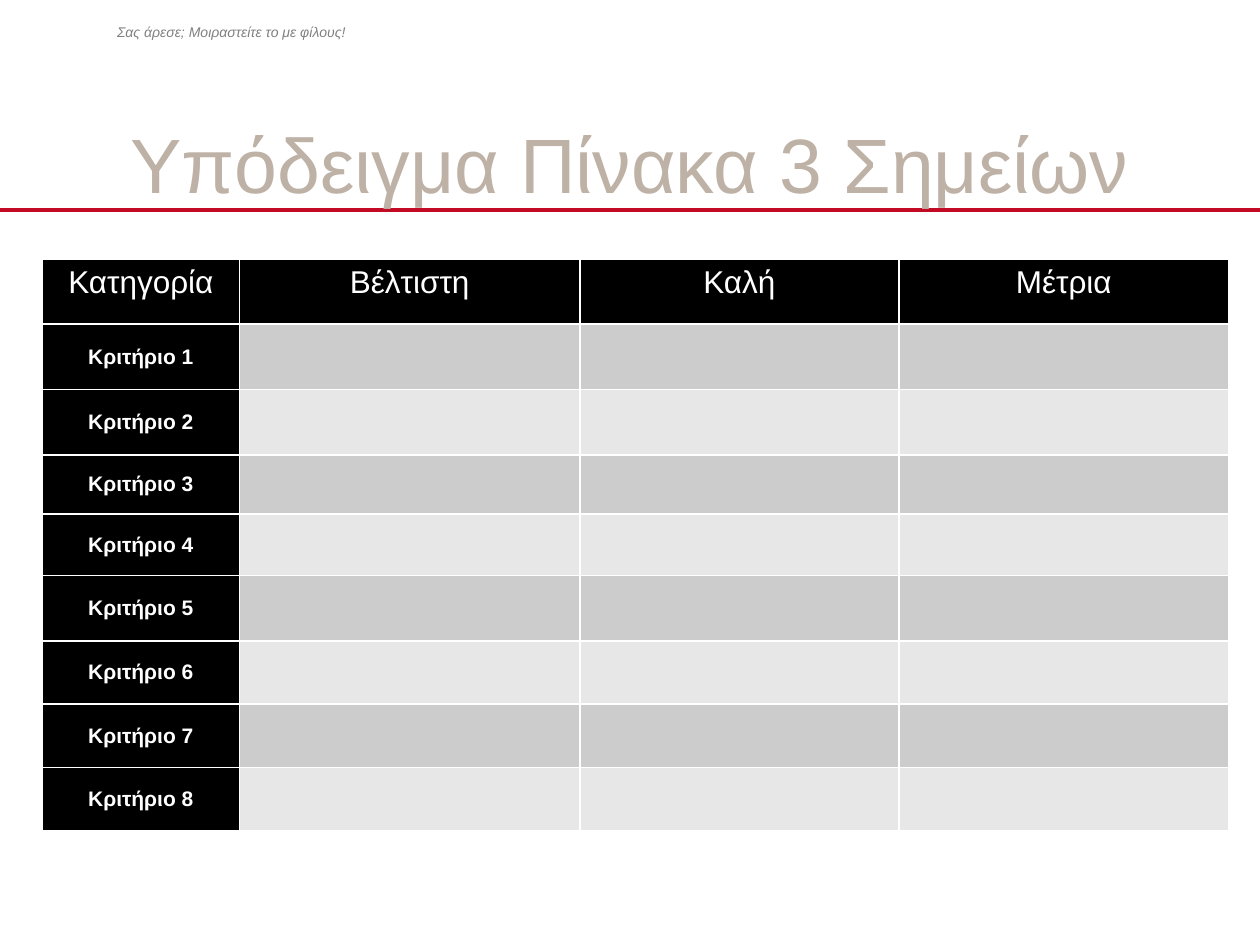
from lxml import etree
from pptx import Presentation
from pptx.dml.color import RGBColor
from pptx.enum.shapes import MSO_CONNECTOR
from pptx.enum.text import MSO_ANCHOR, PP_ALIGN
from pptx.oxml.ns import qn
from pptx.util import Cm, Pt

LEFT, CENTER = PP_ALIGN.LEFT, PP_ALIGN.CENTER
TOP, MIDDLE = MSO_ANCHOR.TOP, MSO_ANCHOR.MIDDLE
STRAIGHT = MSO_CONNECTOR.STRAIGHT

WIDTH, HEIGHT = 25.4, 19.05
NOTE = "Σας άρεσε; Μοιραστείτε το με φίλους!"
TITLE = "Υπόδειγμα Πίνακα 3 Σημείων"
HEADS = ["Κατηγορία", "Βέλτιστη", "Καλή", "Μέτρια"]
LABELS = [f"Κριτήριο {n}" for n in range(1, 9)]
COLS = [3.98, 6.86, 6.43, 6.65]
ROWS = [1.31, 1.32, 1.32, 1.19, 1.24, 1.32, 1.27, 1.28, 1.27]
BLACK, WHITE, RED = "000000", "FFFFFF", "C20A24"
BANDS = ["CCCCCC", "E7E7E7"]


def rgb(code):
    return RGBColor.from_string(code)


def write(frame, text, size=12, color=WHITE, bold=False, italic=False,
          align=CENTER):
    para = frame.paragraphs[0]
    para.alignment = align
    run = para.add_run()
    run.text = text
    font = run.font
    font.name, font.size = "Arial", Pt(size)
    font.bold, font.italic = bold, italic
    font.color.rgb = rgb(color)


def add_text(slide, text, box, anchor=TOP, **style):
    frame = slide.shapes.add_textbox(*map(Cm, box)).text_frame
    frame.word_wrap = True
    frame.vertical_anchor = anchor
    write(frame, text, **style)


def add_rule(slide, y):
    rule = slide.shapes.add_connector(STRAIGHT, 0, Cm(y), Cm(WIDTH), Cm(y))
    rule.line.color.rgb = rgb(RED)
    rule.line.width = Pt(2.25)
    etree.SubElement(rule._element.spPr, qn("a:effectLst"))


def paint(cell, color):
    """Give the cell thin white borders and a solid fill."""
    props = cell._tc.get_or_add_tcPr()
    for side in ("lnL", "lnR", "lnT", "lnB"):
        edge = etree.SubElement(props, qn(f"a:{side}"), w=str(Pt(1)))
        solid = etree.SubElement(edge, qn("a:solidFill"))
        etree.SubElement(solid, qn("a:srgbClr"), val=WHITE)
    cell.fill.solid()
    cell.fill.fore_color.rgb = rgb(color)


def add_grid(slide, left, top):
    table = slide.shapes.add_table(
        len(ROWS), len(COLS), Cm(left), Cm(top),
        Cm(sum(COLS)), Cm(sum(ROWS))).table
    for col, width in zip(table.columns, COLS):
        col.width = Cm(width)
    for row, height in zip(table.rows, ROWS):
        row.height = Cm(height)
    for r in range(len(ROWS)):
        for c in range(len(COLS)):
            dark = r == 0 or c == 0
            paint(table.cell(r, c), BLACK if dark else BANDS[(r - 1) % 2])
    for c, head in enumerate(HEADS):
        write(table.cell(0, c).text_frame, head, size=18)
    for r, label in enumerate(LABELS, 1):
        cell = table.cell(r, 0)
        cell.vertical_anchor = MIDDLE
        write(cell.text_frame, label, bold=True)


def main():
    deck = Presentation()
    deck.slide_width, deck.slide_height = Cm(WIDTH), Cm(HEIGHT)
    slide = deck.slides.add_slide(deck.slide_layouts[6])
    add_rule(slide, 4.24)
    add_text(slide, NOTE, (2.11, 0.36, 7.82, 0.6), size=8, color="808080",
             italic=True, align=LEFT)
    add_text(slide, TITLE, (0, 2.34, WIDTH, 1.9), anchor=MIDDLE, size=44,
             color="BEB1A6")
    add_grid(slide, 0.85, 5.22)
    deck.save("out.pptx")


if __name__ == "__main__":
    main()
